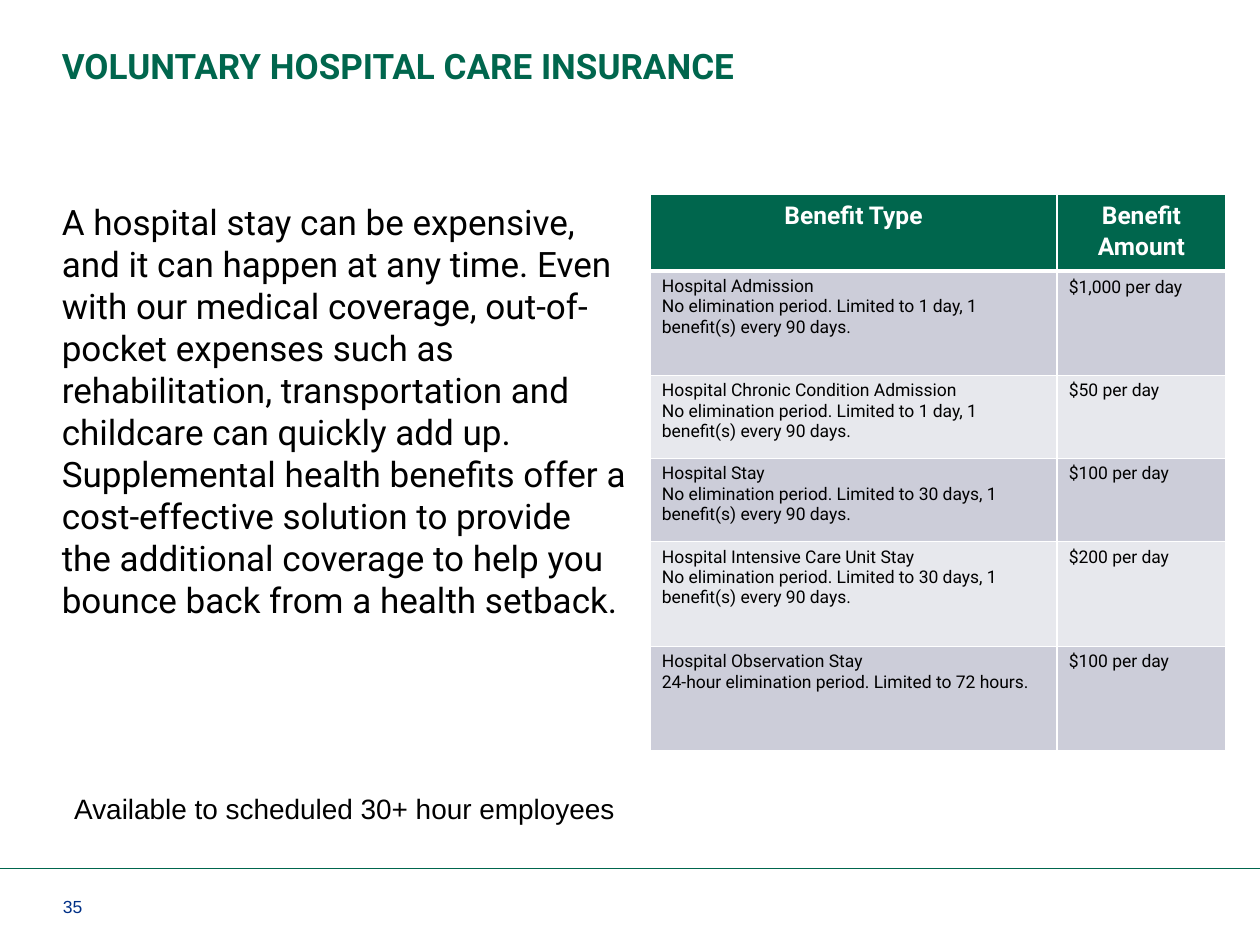
"""Build the slide on voluntary hospital care insurance."""
from typing import NamedTuple

from lxml.etree import SubElement
from pptx import Presentation
from pptx.dml.color import RGBColor as Rgb
from pptx.enum.shapes import MSO_CONNECTOR as Conn
from pptx.enum.text import MSO_ANCHOR as Anchor
from pptx.enum.text import MSO_AUTO_SIZE as Fit
from pptx.enum.text import PP_ALIGN as Align
from pptx.oxml.ns import qn
from pptx.util import Pt

GREEN = Rgb(0x00, 0x66, 0x4D)
BLUE = Rgb(0x00, 0x30, 0x87)
BLACK = Rgb(0, 0, 0)
WHITE = Rgb(0xFF, 0xFF, 0xFF)
BANDS = Rgb(0xCC, 0xCD, 0xD9), Rgb(0xE7, 0xE8, 0xED)


class Style(NamedTuple):
    size: float
    color: Rgb = BLACK
    name: str = "Roboto"
    bold: bool = False
    align: Align = Align.LEFT
    space: float = 1.0


class Box(NamedTuple):
    left: float
    top: float
    width: float
    height: float


class Benefit(NamedTuple):
    kind: str
    terms: str
    amount: str
    height: float
    space: float = 1.0


HEAD = Style(14, WHITE, bold=True, align=Align.CENTER, space=1.07)
CELL = Style(10)
DAY = "No elimination period. Limited to 1 day, 1 benefit(s) every 90 days."
MONTH = "No elimination period. Limited to 30 days, 1 benefit(s) every 90 days."
STORY = (
    "A hospital stay can be expensive, and it can happen at any time. "
    "Even with our medical coverage, out-of-pocket expenses such as "
    "rehabilitation, transportation and childcare can quickly add "
    "up. Supplemental health benefits offer a cost-effective solution to "
    "provide the additional coverage to help you bounce back from a health "
    "setback."
)
PLAN = [
    Benefit("Hospital Admission", DAY, "$1,000 per day", 59.76, 1.07),
    Benefit("Hospital Chronic Condition Admission", DAY, "$50 per day", 47.52),
    Benefit("Hospital Stay", MONTH, "$100 per day", 47.52),
    Benefit("Hospital Intensive Care Unit Stay", MONTH, "$200 per day", 59.76),
    Benefit(
        "Hospital Observation Stay",
        "24-hour elimination period. Limited to 72 hours.",
        "$100 per day",
        59.76,
    ),
]


def write(frame, text: str, style: Style) -> None:
    """Fill a text frame and format each paragraph."""
    frame.text = text
    for para in frame.paragraphs:
        para.alignment = style.align
        para.line_spacing = style.space
        font = para.font
        font.size, font.name, font.bold = Pt(style.size), style.name, style.bold
        font.color.rgb = style.color


def place(shape, box: Box, text: str, style: Style, left=0.0, right=0.0,
          anchor=Anchor.TOP) -> None:
    """Set the place, insets and text of a shape."""
    shape.left, shape.top, shape.width, shape.height = map(Pt, box)
    frame = shape.text_frame
    frame.word_wrap = True
    frame.auto_size = Fit.NONE
    frame.vertical_anchor = anchor
    frame.margin_left, frame.margin_right = Pt(left), Pt(right)
    frame.margin_top = frame.margin_bottom = Pt(3.6)
    write(frame, text, style)


def paint(cell, text: str, style: Style, fill: Rgb, base: float) -> None:
    """Write a table cell with its borders and fill."""
    cell.margin_left = cell.margin_right = Pt(6.75)
    cell.margin_top = cell.margin_bottom = Pt(3)
    props = cell._tc.get_or_add_tcPr()
    for side, width in zip("LRTB", (1, 1, 1, base)):
        edge = SubElement(props, qn(f"a:ln{side}"), w=str(Pt(width)))
        solid = SubElement(edge, qn("a:solidFill"))
        SubElement(solid, qn("a:srgbClr"), val=str(WHITE))
    cell.fill.solid()
    cell.fill.fore_color.rgb = fill
    write(cell.text_frame, text, style)


def draw_plan(shapes) -> None:
    """Draw the table of benefits."""
    frame = shapes.add_table(
        len(PLAN) + 1, 2, Pt(371.5), Pt(110.9), Pt(329), Pt(318.2))
    table = frame.table
    for col, width in zip(table.columns, (232.5, 96.5)):
        col.width = Pt(width)
    table.rows[0].height = Pt(43.9)
    for col, text in enumerate(("Benefit Type", "Benefit Amount")):
        paint(table.cell(0, col), text, HEAD, GREEN, 3)
    for row, item in enumerate(PLAN, 1):
        table.rows[row].height = Pt(item.height)
        fill = BANDS[(row - 1) % 2]
        paint(table.cell(row, 0), f"{item.kind}\n{item.terms}", CELL, fill, 1)
        style = CELL._replace(space=item.space)
        paint(table.cell(row, 1), item.amount, style, fill, 1)


def draw_rule(shapes) -> None:
    """Draw the line above the footer."""
    rule = shapes.add_connector(
        Conn.STRAIGHT, Pt(0), Pt(496), Pt(720), Pt(496))
    rule.line.color.rgb = GREEN
    rule.line.width = Pt(0.5)
    SubElement(rule._element.spPr, qn("a:effectLst"))


def main() -> None:
    """Build and save the deck."""
    deck = Presentation()
    deck.slide_width, deck.slide_height = Pt(720), Pt(540)
    slide = deck.slides.add_slide(deck.slide_layouts[5])
    shapes = slide.shapes

    def note(box: Box, *args, **more) -> None:
        """Add a text box."""
        place(shapes.add_textbox(*map(Pt, box)), box, *args, **more)

    draw_rule(shapes)
    note(Box(36, 509.8, 39, 18), "35", Style(10, BLUE, "Arial"),
         anchor=Anchor.BOTTOM)
    place(shapes.title, Box(35.3, 24.5, 625, 28),
          "VOLUNTARY HOSPITAL CARE INSURANCE",
          Style(20, GREEN, bold=True, space=0.9))
    note(Box(35.3, 110.9, 329.8, 195.8), STORY, Style(20), right=7.2)
    draw_plan(shapes)
    note(Box(35.3, 448.6, 358.6, 26.6),
         "Available to scheduled 30+ hour employees",
         Style(16, name="Arial"), left=7.2, right=7.2)
    deck.save("out.pptx")


if __name__ == "__main__":
    main()
